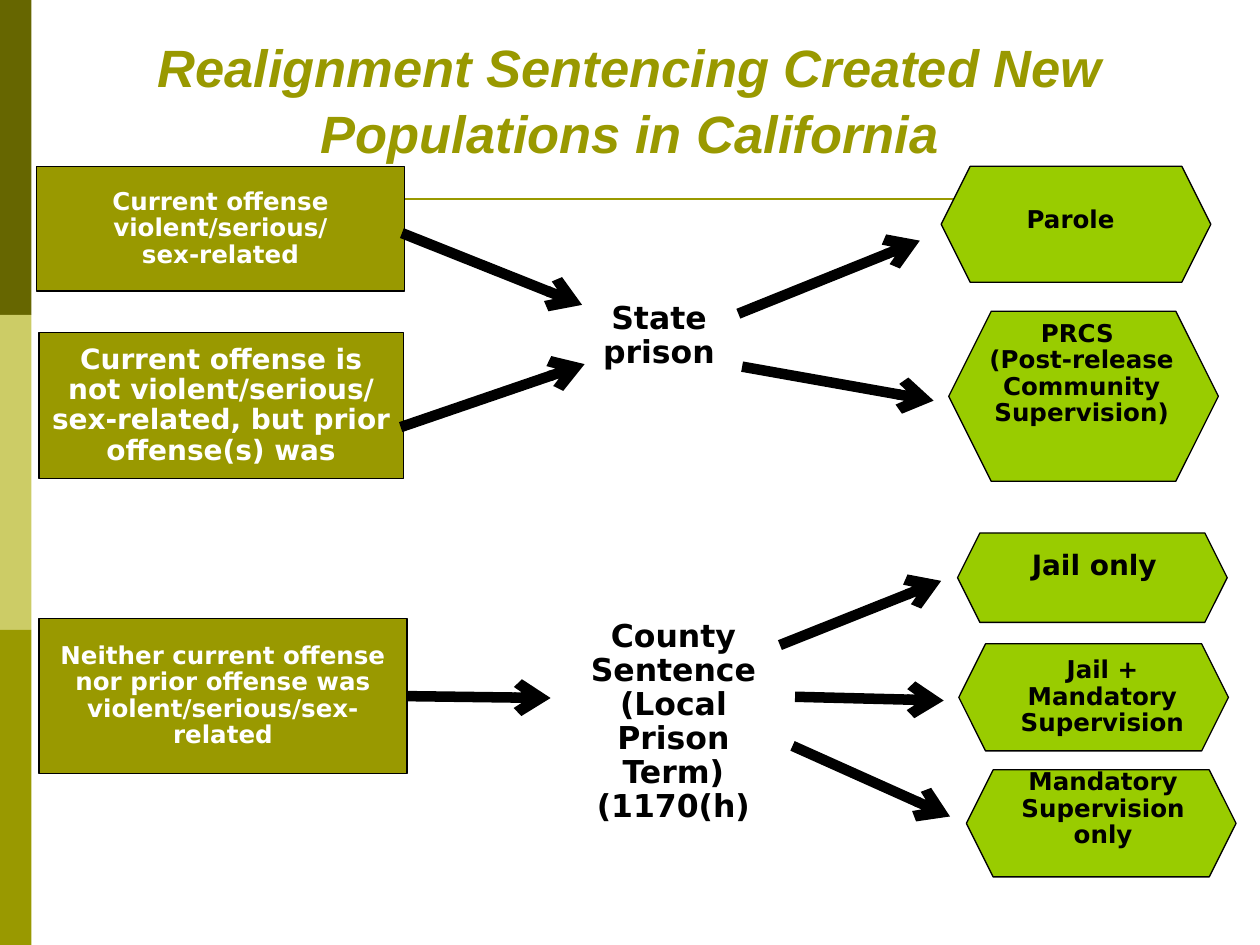
from dataclasses import dataclass

from lxml import etree
from pptx import Presentation
from pptx.dml.color import RGBColor
from pptx.enum.shapes import MSO_CONNECTOR, MSO_SHAPE
from pptx.enum.text import MSO_ANCHOR, MSO_AUTO_SIZE, PP_ALIGN
from pptx.oxml.ns import qn
from pptx.util import Emu, Pt

RECTANGLE, HEXAGON = MSO_SHAPE.RECTANGLE, MSO_SHAPE.HEXAGON
STRAIGHT = MSO_CONNECTOR.STRAIGHT
TOP, MIDDLE = MSO_ANCHOR.TOP, MSO_ANCHOR.MIDDLE
CENTER, LEFT = PP_ALIGN.CENTER, PP_ALIGN.LEFT
GROW = MSO_AUTO_SIZE.SHAPE_TO_FIT_TEXT
NO_FIT = MSO_AUTO_SIZE.NONE
RIGHT_SIDE = 3
EMU_PER_PX = 9144


@dataclass(frozen=True)
class Theme:
    """Colours, fonts and sizes of the slide."""
    olive: str = "999900"
    dark_olive: str = "666600"
    pale_olive: str = "CCCC66"
    green: str = "99CC00"
    black: str = "000000"
    white: str = "FFFFFF"
    title_font: str = "Arial"
    body_font: str = "DejaVu Sans"
    title: int = 30
    large: int = 18
    medium: int = 16
    small: int = 14
    outline: float = 0.75
    rule: float = 1.5
    arrow: int = 6
    body_spacing: float = 0.9
    title_spacing: float = 1.05


THEME = Theme()


@dataclass(frozen=True)
class Area:
    """Left, top, width and height in px."""
    left: int
    top: int
    width: int
    height: int

    def emu(self) -> tuple:
        """Return the four lengths in EMU."""
        return tuple(px(n) for n in (self.left, self.top, self.width, self.height))


@dataclass(frozen=True)
class Label:
    """Paragraphs of text with their place and size."""
    area: Area
    paragraphs: tuple
    size: int = THEME.small
    align: PP_ALIGN = CENTER
    spacing: float = THEME.body_spacing


@dataclass(frozen=True)
class Outcome:
    """A hexagon and the label over it."""
    hexagon: Area
    label: Label


@dataclass(frozen=True)
class Arrow:
    """Start and end points in px."""
    start: tuple
    end: tuple


BANDS = (THEME.dark_olive, THEME.pale_olive, THEME.olive)
BAND_WIDTH, BAND_HEIGHT = 25, 250

CURRENT = Label(Area(29, 132, 292, 99),
                ("Current offense violent/serious/", "sex-related"))
PRIOR = Label(Area(31, 264, 289, 116),
              ("Current offense is not violent/serious/",
               "sex-related, but prior offense(s) was"), THEME.medium)
NEITHER = Label(Area(31, 491, 292, 123),
                ("Neither current offense nor prior offense was violent/serious/sex-related",))

PLACEMENTS = (
    Label(Area(454, 235, 138, 65), ("State prison",), THEME.large),
    Label(Area(438, 487, 193, 120),
          ("County Sentence", "(Local Prison Term) (1170(h)"), THEME.large),
)

OUTCOMES = (
    Outcome(Area(747, 132, 214, 92),
            Label(Area(805, 157, 104, 34), ("Parole",), align=LEFT, spacing=1.0)),
    Outcome(Area(753, 247, 214, 135),
            Label(Area(763, 250, 191, 95),
                  ("PRCS \n(Post-release Community Supervision)",))),
    Outcome(Area(760, 423, 214, 71),
            Label(Area(808, 433, 121, 59), ("Jail only",), THEME.medium)),
    Outcome(Area(761, 511, 214, 85),
            Label(Area(792, 517, 166, 74), ("Jail + Mandatory Supervision",))),
    Outcome(Area(767, 611, 214, 85),
            Label(Area(788, 606, 175, 74), ("Mandatory Supervision only",))),
)

ARROWS = (
    Arrow((319, 185), (462, 242)),
    Arrow((318, 339), (464, 289)),
    Arrow((586, 249), (730, 191)),
    Arrow((589, 291), (741, 318)),
    Arrow((619, 512), (747, 461)),
    Arrow((631, 553), (749, 556)),
    Arrow((629, 592), (754, 648)),
)
NEITHER_ARROW = Arrow((323, 554), (437, 554))


def px(length: int) -> Emu:
    """Turn px into EMU."""
    return Emu(length * EMU_PER_PX)


def rgb(colour: str) -> RGBColor:
    """Turn a hex string into a colour."""
    return RGBColor.from_string(colour)


def write(frame, label: Label, colour: str, font: str, italic: bool = False) -> None:
    """Write a label into a text frame run by run."""
    frame.word_wrap = True
    for index, text in enumerate(label.paragraphs):
        para = frame.add_paragraph() if index else frame.paragraphs[0]
        para.alignment = label.align
        para.line_spacing = label.spacing
        for number, line in enumerate(text.split("\n")):
            if number:
                para.add_line_break()
            span = para.add_run()
            span.text = line
            span.font.name = font
            span.font.size = Pt(label.size)
            span.font.bold = True
            span.font.italic = italic
            span.font.color.rgb = rgb(colour)


def draw_shape(page, kind: MSO_SHAPE, area: Area, fill: str, outlined: bool = True):
    """Draw a filled preset shape."""
    shape = page.shapes.add_shape(kind, *area.emu())
    shape.shadow.inherit = False
    shape.fill.solid()
    shape.fill.fore_color.rgb = rgb(fill)
    if outlined:
        shape.line.color.rgb = rgb(THEME.black)
        shape.line.width = Pt(THEME.outline)
    else:
        shape.line.fill.background()
    return shape


def draw_offense(page, label: Label):
    """Draw an offense box with its text."""
    box = draw_shape(page, RECTANGLE, label.area, THEME.olive)
    box.text_frame.vertical_anchor = MIDDLE
    write(box.text_frame, label, THEME.white, THEME.body_font)
    return box


def draw_label(page, label: Label) -> None:
    """Draw a text box that grows with its text."""
    box = page.shapes.add_textbox(*label.area.emu())
    write(box.text_frame, label, THEME.black, THEME.body_font)
    box.text_frame.auto_size = GROW


def draw_line(page, start: tuple, end: tuple, colour: str, width: float):
    """Draw a straight connector without shadow."""
    line = page.shapes.add_connector(STRAIGHT, *(px(n) for n in start + end))
    line.line.color.rgb = rgb(colour)
    line.line.width = Pt(width)
    etree.SubElement(line._element.spPr, qn("a:effectLst"))
    return line


def draw_arrow(page, arrow: Arrow):
    """Draw a thick arrow with an open head."""
    line = draw_line(page, arrow.start, arrow.end, THEME.black, THEME.arrow)
    etree.SubElement(line.line._get_or_add_ln(), qn("a:tailEnd"), type="arrow")
    return line


def set_title(page) -> None:
    """Place and format the title."""
    label = Label(Area(0, 25, 1000, 72),
                  ("Realignment Sentencing Created New Populations in California",),
                  THEME.title, spacing=THEME.title_spacing)
    title = page.shapes.title
    title.left, title.top, title.width, title.height = label.area.emu()
    frame = title.text_frame
    frame.margin_left = frame.margin_top = frame.margin_right = frame.margin_bottom = 0
    frame.vertical_anchor = TOP
    frame.auto_size = NO_FIT
    write(frame, label, THEME.olive, THEME.title_font, italic=True)


def main() -> None:
    """Build and save the deck."""
    deck = Presentation()
    deck.slide_width, deck.slide_height = px(1000), px(750)
    page = deck.slides.add_slide(deck.slide_layouts.get_by_name("Title Only"))
    set_title(page)
    for index, colour in enumerate(BANDS):
        band = Area(0, index * BAND_HEIGHT, BAND_WIDTH, BAND_HEIGHT)
        draw_shape(page, RECTANGLE, band, colour, outlined=False)
    draw_line(page, (50, 158), (933, 158), THEME.olive, THEME.rule)
    for outcome in OUTCOMES:
        draw_shape(page, HEXAGON, outcome.hexagon, THEME.green)
        draw_label(page, outcome.label)
    for label in (CURRENT, PRIOR):
        draw_offense(page, label)
    neither_box = draw_offense(page, NEITHER)
    for label in PLACEMENTS:
        draw_label(page, label)
    for arrow in ARROWS:
        draw_arrow(page, arrow)
    draw_arrow(page, NEITHER_ARROW).begin_connect(neither_box, RIGHT_SIDE)
    deck.save("out.pptx")


if __name__ == "__main__":
    main()
